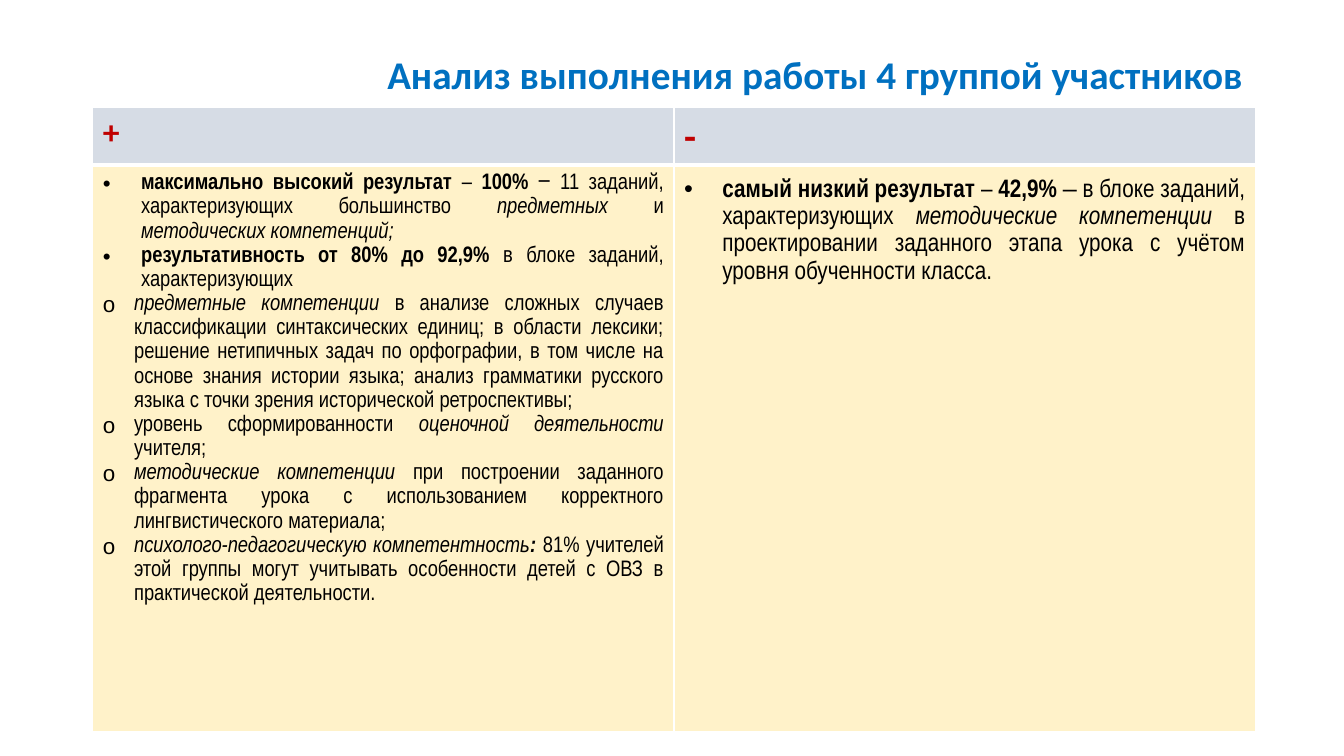
from lxml.etree import SubElement
from pptx import Presentation
from pptx.dml.color import RGBColor
from pptx.enum.text import MSO_ANCHOR, PP_ALIGN
from pptx.oxml.ns import qn
from pptx.util import Inches, Pt

BLUE = RGBColor(0x00, 0x70, 0xC0)
RED = RGBColor(0xC0, 0x00, 0x00)
BLACK = RGBColor(0x00, 0x00, 0x00)
WHITE = RGBColor(0xFF, 0xFF, 0xFF)
GREY = RGBColor(0xD6, 0xDC, 0xE5)
CREAM = RGBColor(0xFF, 0xF2, 0xC9)

TITLE = "Анализ выполнения работы 4 группой участников"
HEADINGS = [("+", 24), ("-", 28)]
BULLET_INDENTS = {"•": 0.38, "o": 0.31}

STRENGTHS = [
    ("•", [("максимально высокий результат", "b"), (" – ", ""), ("100%", "b"),
           (" ‒ 11 заданий, характеризующих большинство ", ""),
           ("предметных ", "i"), ("и", ""), (" методических компетенций;", "i")]),
    ("•", [("результативность от 80% до 92,9%", "b"),
           (" в блоке заданий, характеризующих", "")]),
    ("o", [("предметные компетенции", "i"),
           (" в анализе сложных случаев классификации синтаксических единиц; "
            "в области лексики; решение нетипичных задач по орфографии, "
            "в том числе на основе знания истории языка; анализ грамматики "
            "русского языка с точки зрения исторической ретроспективы;", "")]),
    ("o", [("уровень сформированности ", ""), ("оценочной деятельности", "i"),
           (" учителя;", "")]),
    ("o", [("методические компетенции", "i"),
           (" при построении заданного фрагмента урока с использованием "
            "корректного лингвистического материала;", "")]),
    ("o", [("психолого-педагогическую компетентность", "i"), (": ", "bi"),
           ("81% учителей этой группы могут учитывать особенности детей "
            "с ОВЗ в практической деятельности.", "")]),
]
WEAKNESSES = [
    ("•", [("самый низкий результат", "b"), (" – ", ""), ("42,9% ", "b"),
           ("‒", "a"), (" в блоке заданий, характеризующих ", ""),
           ("методические компетенции", "i"),
           (" в проектировании заданного этапа урока с учётом уровня "
            "обученности класса.", "")]),
]


def add_span(para, text, font, size, color, bold=False, italic=False):
    span = para.add_run()
    span.text = text
    span.font.name = font
    span.font.size = Pt(size)
    span.font.color.rgb = color
    span.font.bold = bold
    span.font.italic = italic


def set_bullet(para, mark):
    properties = para._p.get_or_add_pPr()
    indent = Inches(BULLET_INDENTS[mark])
    properties.set("marL", str(indent))
    properties.set("indent", str(-indent))
    SubElement(properties, qn("a:buFont"), typeface="Arial")
    SubElement(properties, qn("a:buChar"), char=mark)


def style_cell(cell, color, bottom_width=1):
    properties = cell._tc.get_or_add_tcPr()
    for side, width in (("L", 1), ("R", 1), ("T", 1), ("B", bottom_width)):
        line = SubElement(properties, qn(f"a:ln{side}"), w=str(Pt(width)))
        fill = SubElement(line, qn("a:solidFill"))
        SubElement(fill, qn("a:srgbClr"), val=str(WHITE))
    cell.fill.solid()
    cell.fill.fore_color.rgb = color


def fill_list(cell, items, size):
    for index, (mark, spans) in enumerate(items):
        frame = cell.text_frame
        para = frame.add_paragraph() if index else frame.paragraphs[0]
        para.alignment = PP_ALIGN.JUSTIFY
        para.line_spacing = 1.15
        set_bullet(para, mark)
        for text, style in spans:
            font = "Arial" if "a" in style else "Arial Narrow"
            add_span(para, text, font, size, BLACK, "b" in style, "i" in style)


def add_title(page, left, top, width, height):
    box = page.shapes.add_textbox(
        Inches(left), Inches(top), Inches(width), Inches(height))
    frame = box.text_frame
    frame.word_wrap = True
    frame.vertical_anchor = MSO_ANCHOR.TOP
    frame.margin_top = Inches(0.15)
    para = frame.paragraphs[0]
    para.alignment = PP_ALIGN.RIGHT
    para.line_spacing = 0.9
    add_span(para, TITLE, "Calibri", 28, BLUE, bold=True)


def add_comparison(page, left, top, width, height):
    header_height = 0.57
    table = page.shapes.add_table(
        2, 2, Inches(left), Inches(top), Inches(width), Inches(height)).table
    table.rows[0].height = Inches(header_height)
    table.rows[1].height = Inches(height - header_height)
    for column, (heading, size) in enumerate(HEADINGS):
        cell = table.cell(0, column)
        style_cell(cell, GREY, bottom_width=3)
        add_span(cell.text_frame.paragraphs[0], heading, "Calibri", size, RED, bold=True)
    for column, (items, size) in enumerate([(STRENGTHS, 16), (WEAKNESSES, 18)]):
        cell = table.cell(1, column)
        style_cell(cell, CREAM)
        fill_list(cell, items, size)


def main():
    deck = Presentation()
    deck.slide_width = Inches(13.33)
    deck.slide_height = Inches(7.5)
    page = deck.slides.add_slide(deck.slide_layouts[6])
    add_title(page, 0.92, 0.4, 11.5, 1.45)
    add_comparison(page, 0.92, 1.07, 11.53, 6.11)
    deck.save("out.pptx")


if __name__ == "__main__":
    main()
